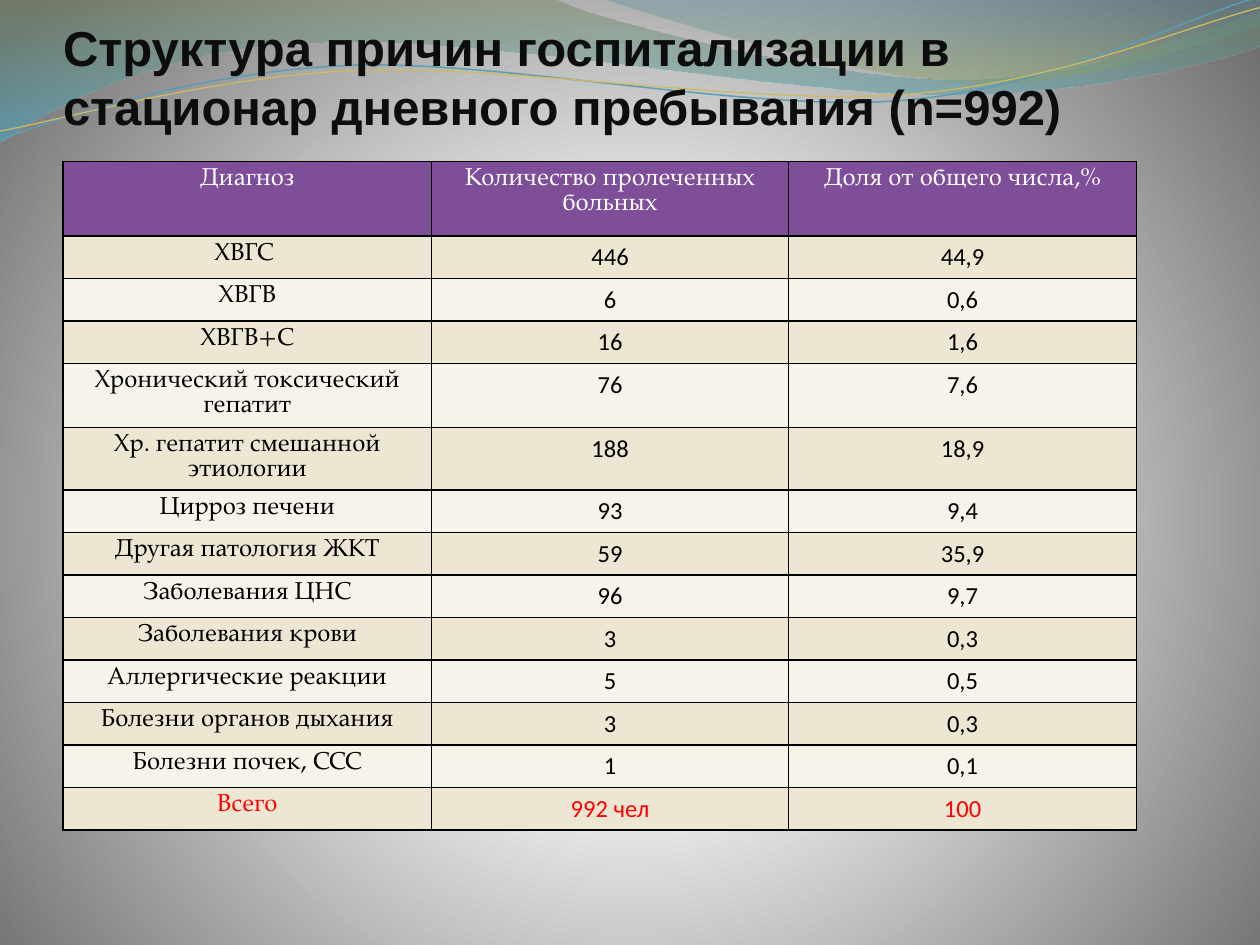
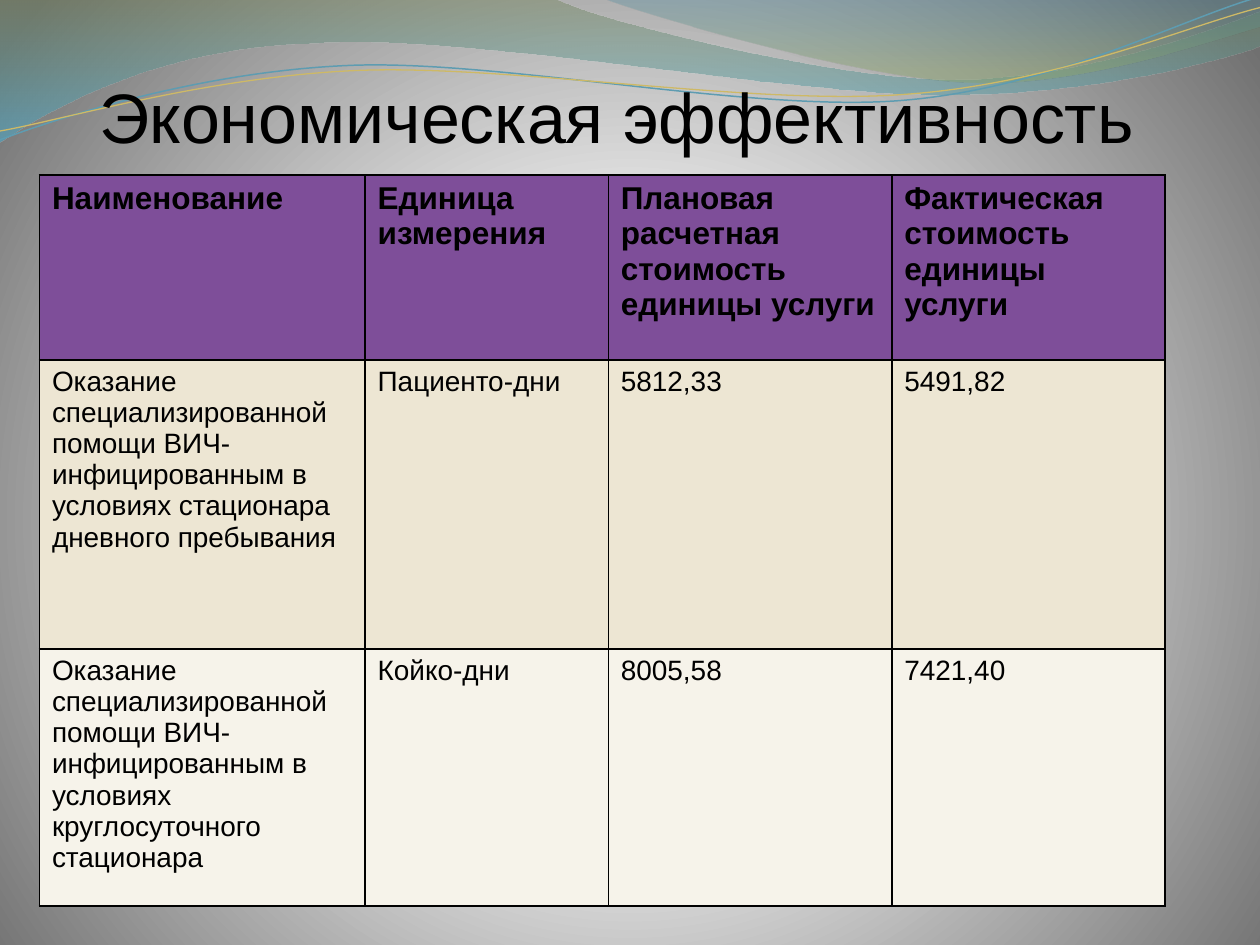
from dataclasses import dataclass

from lxml import etree
from pptx import Presentation
from pptx.dml.color import RGBColor as Rgb
from pptx.enum.text import MSO_ANCHOR as Anchor
from pptx.enum.text import MSO_AUTO_SIZE as AutoSize
from pptx.enum.text import PP_ALIGN as Align
from pptx.oxml import parse_xml
from pptx.oxml.ns import nsdecls, qn
from pptx.util import Inches, Pt


@dataclass(frozen=True)
class Theme:
    ink: str = "000000"
    heading: str = "0D0D0D"
    header_text: str = "FFFFFF"
    total: str = "FF0000"
    header_fill: str = "7E4E99"
    bands: tuple = ("EDE6D3", "F6F3EA")
    glow: tuple = ((0, "FFFFFF", 100), (25, "FFFFFF", 100), (100, "707070", 100))
    wide_wave: tuple = ((0, "74855E", 45), (100, "4AACCE", 55))
    right_wave: tuple = ((0, "45889F", 30), (80, "8AA36D", 45))
    blue_thread: str = "5E9CB1"
    gold_thread: str = "CEB966"
    sans: str = "Arial"
    serif: str = "TeX Gyre Pagella"
    figures: str = "Calibri"
    small_title: int = 28
    big_title: int = 40
    diagnosis_size: int = 14
    cost_header_size: int = 18
    cost_size: int = 16


THEME = Theme()
WIDTH, HEIGHT = Inches(10), Inches(7.5)

WIDE_WAVE = [
    [(0, 0)], [(4.4, -0.01)],
    [(4.76, 0.17), (6.64, 0.63), (7.58, 0.63)],
    [(8.53, 0.63), (9.58, 0.26), (10, 0.09)],
    [(10.01, 0.36)],
    [(9.83, 0.44), (8.7, 0.76), (7.46, 0.75)],
    [(6.22, 0.75), (3.82, 0.28), (2.57, 0.34)],
    [(1.29, 0.36), (0.46, 0.83), (-0.01, 1.13)],
    [(0, 0)],
]
RIGHT_WAVE = [
    [(4.79, -0.01)],
    [(5.09, 0.11), (6.82, 0.62), (7.69, 0.65)],
    [(8.56, 0.69), (9.61, 0.32), (10, 0.21)],
    [(10, 0)], [(4.79, -0.01)],
]
BLUE_THREAD = [
    [(0, 1.11)],
    [(0.48, 0.93), (1.58, 0.57), (2.77, 0.52)],
    [(3.95, 0.47), (5.93, 0.89), (7.13, 0.8)],
    [(8.33, 0.71), (9.38, 0.15), (9.98, -0.02)],
]
GOLD_THREAD = [
    [(0, 1.04)],
    [(0.47, 0.96), (1.64, 0.61), (2.83, 0.56)],
    [(4.03, 0.51), (5.97, 0.84), (7.17, 0.75)],
    [(8.36, 0.67), (9.41, 0.21), (10, 0.06)],
]

DIAGNOSES = [
    ("Диагноз", "Количество пролеченных больных", "Доля от общего числа,%"),
    ("ХВГС ", "446", "44,9"),
    ("ХВГВ", "6", "0,6"),
    ("ХВГВ+С", "16", "1,6"),
    ("Хронический токсический гепатит", "76", "7,6"),
    ("Хр. гепатит смешанной этиологии", "188", "18,9"),
    ("Цирроз печени", "93", "9,4"),
    ("Другая патология ЖКТ", "59", "35,9"),
    ("Заболевания ЦНС", "96", "9,7"),
    ("Заболевания крови", "3", "0,3"),
    ("Аллергические реакции", "5", "0,5"),
    ("Болезни органов дыхания", "3", "0,3"),
    ("Болезни почек, ССС", "1", "0,1"),
    ("Всего", "992 чел", "100"),
]
CARE = "Оказание специализированной помощи ВИЧ-инфицированным в условиях "
COSTS = [
    ("Наименование", "Единица измерения",
     "Плановая расчетная стоимость единицы услуги",
     "Фактическая стоимость единицы услуги"),
    (CARE + "стационара дневного пребывания", "Пациенто-дни", "5812,33", "5491,82"),
    (CARE + "круглосуточного стационара", "Койко-дни", "8005,58", "7421,40"),
]


def across(percent):
    return round(WIDTH * percent / 100)


def down(percent):
    return round(HEIGHT * percent / 100)


def gradient(stops, direction):
    marks = "".join(
        f'<a:gs pos="{place * 1000}"><a:srgbClr val="{color}">'
        f'<a:alpha val="{opacity * 1000}"/></a:srgbClr></a:gs>'
        for place, color, opacity in stops)
    return (f'<a:gradFill {nsdecls("a")} rotWithShape="1">'
            f'<a:gsLst>{marks}</a:gsLst>{direction}</a:gradFill>')


def bend_segments(curve, segments):
    steps = iter(list(curve.element.iter(qn("a:lnTo"))))
    for segment in segments:
        corners = [next(steps) for _ in segment]
        if len(corners) == 1:
            continue
        bend = etree.Element(qn("a:cubicBezTo"))
        corners[0].addprevious(bend)
        for corner in corners:
            bend.append(corner[0])
            corner.getparent().remove(corner)


def add_curve(slide, outline, close):
    start, *points = [(Inches(x), Inches(y)) for segment in outline for x, y in segment]
    builder = slide.shapes.build_freeform(*start)
    builder.add_line_segments(points, close=close)
    curve = builder.convert_to_shape()
    bend_segments(curve, outline[1:])
    curve.shadow.inherit = False
    curve.fill.background()
    return curve


def add_wave(slide, outline, stops):
    wave = add_curve(slide, outline, True)
    wave.line.fill.background()
    properties = wave.element.spPr
    fill = parse_xml(gradient(stops, '<a:lin ang="5400000" scaled="0"/>'))
    properties.replace(properties.find(qn("a:noFill")), fill)
    return wave


def add_thread(slide, outline, color, weight):
    thread = add_curve(slide, outline, False)
    thread.line.color.rgb = Rgb.from_string(color)
    thread.line.width = Pt(weight)
    return thread


def decorate_layout(layout, slide):
    for placeholder in list(layout.placeholders)[1:]:
        placeholder.element.getparent().remove(placeholder.element)
    centre = ('<a:path path="circle">'
              '<a:fillToRect l="10000" t="110000" r="10000" b="100000"/></a:path>')
    layout.element.cSld.insert(0, parse_xml(
        f'<p:bg {nsdecls("p", "a")}><p:bgPr>{gradient(THEME.glow, centre)}'
        '<a:effectLst/></p:bgPr></p:bg>'))
    decorations = [
        add_wave(slide, WIDE_WAVE, THEME.wide_wave),
        add_wave(slide, RIGHT_WAVE, THEME.right_wave),
        add_thread(slide, BLUE_THREAD, THEME.blue_thread, 0.85),
        add_thread(slide, GOLD_THREAD, THEME.gold_thread, 0.75),
    ]
    for depth, decoration in enumerate(decorations, start=2):
        layout.shapes.element.insert(depth, decoration.element)


def style_text(paragraph, font_name, size, color, bold=False, align=Align.LEFT):
    paragraph.alignment = align
    font = paragraph.font
    font.name, font.size, font.bold = font_name, Pt(size), bold
    font.color.rgb = Rgb.from_string(color)


def set_title(slide, text, box, **style):
    title = slide.shapes.title
    left, top, width, height = box
    title.left, title.top = across(left), down(top)
    title.width, title.height = across(width), down(height)
    frame = title.text_frame
    frame.text = text
    frame.word_wrap = True
    frame.auto_size = AutoSize.NONE
    frame.vertical_anchor = Anchor.BOTTOM
    frame.margin_left = frame.margin_right = frame.margin_bottom = 0
    frame.margin_top = Inches(0.05)
    style_text(frame.paragraphs[0], THEME.sans, **style)


def add_borders(cell):
    properties = cell._tc.get_or_add_tcPr()
    for side in ("lnL", "lnR", "lnT", "lnB"):
        border = etree.SubElement(properties, qn(f"a:{side}"), w=str(Pt(1)))
        fill = etree.SubElement(border, qn("a:solidFill"))
        etree.SubElement(fill, qn("a:srgbClr"), val=THEME.ink)


def add_grid(slide, records, corner, columns, rows, text_style):
    table = slide.shapes.add_table(
        len(rows), len(columns), across(corner[0]), down(corner[1]),
        across(sum(columns)), down(sum(rows))).table
    for column, share in zip(table.columns, columns):
        column.width = across(share)
    for r, (record, share) in enumerate(zip(records, rows)):
        table.rows[r].height = down(share)
        band = THEME.bands[(r - 1) % 2] if r else THEME.header_fill
        for c, text in enumerate(record):
            cell = table.cell(r, c)
            cell.text = text
            add_borders(cell)
            cell.fill.solid()
            cell.fill.fore_color.rgb = Rgb.from_string(band)
            style_text(cell.text_frame.paragraphs[0], **text_style(r, c))


def diagnosis_style(row, column):
    colors = {0: THEME.header_text, len(DIAGNOSES) - 1: THEME.total}
    return dict(font_name=THEME.figures if row and column else THEME.serif,
                size=THEME.diagnosis_size, color=colors.get(row, THEME.ink),
                align=Align.CENTER)


def cost_style(row, column):
    return dict(font_name=THEME.sans, color=THEME.ink, bold=row == 0,
                size=THEME.cost_size if row else THEME.cost_header_size)


def main():
    deck = Presentation()
    deck.slide_width, deck.slide_height = WIDTH, HEIGHT
    title_only = deck.slide_layouts[5]

    causes = deck.slides.add_slide(title_only)
    decorate_layout(title_only, causes)
    set_title(causes,
              "Структура причин госпитализации в стационар дневного пребывания (n=992)",
              (5, 4, 90, 10.3), size=THEME.small_title, color=THEME.heading, bold=True)
    add_grid(causes, DIAGNOSES, (5, 17.07), (29.25, 28.35, 27.6),
             [7.9] + [4.5] * 3 + [6.8] + [4.5] * 9, diagnosis_style)

    economics = deck.slides.add_slide(title_only)
    set_title(economics, "Экономическая эффективность ", (4.7, 0, 90, 16.67),
              size=THEME.big_title, color=THEME.ink, align=Align.CENTER)
    add_grid(economics, COSTS, (3.13, 18.5), (25.85, 19.3, 22.5, 21.7),
             (19.6, 30.6, 27.2), cost_style)

    deck.save("out.pptx")


if __name__ == "__main__":
    main()
